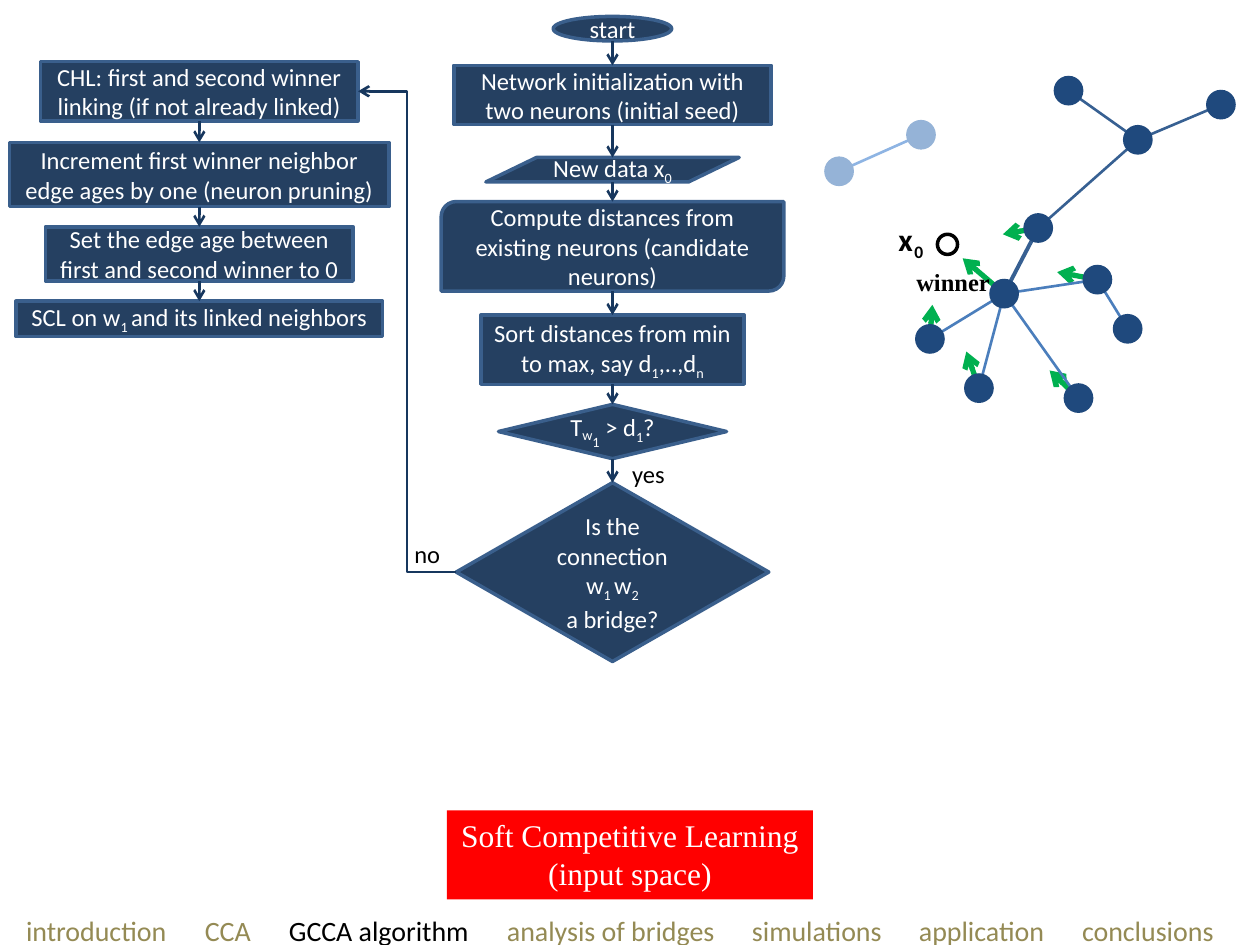
import pptx
import pptx.dml.color
import pptx.enum.shapes
import pptx.enum.text
import pptx.oxml.ns
import pptx.util
import lxml.etree

Pt = pptx.util.Pt
rgb = pptx.dml.color.RGBColor.from_string
qn = pptx.oxml.ns.qn
Shape = pptx.enum.shapes.MSO_SHAPE
Connector = pptx.enum.shapes.MSO_CONNECTOR
Align = pptx.enum.text.PP_ALIGN
Anchor = pptx.enum.text.MSO_ANCHOR

deck = pptx.Presentation()
deck.slide_width, deck.slide_height = Pt(720), Pt(540)
slide = deck.slides.add_slide(deck.slide_layouts[6])
shapes = slide.shapes


def draw_line(start, end, hue, width, arrow=False, kind=Connector.STRAIGHT):
    line = shapes.add_connector(kind, *[Pt(v) for v in (*start, *end)])
    line.line.color.rgb = rgb(hue)
    line.line.width = Pt(width)
    if arrow:
        lxml.etree.SubElement(line.line._get_or_add_ln(), qn("a:tailEnd"), type="arrow")
    lxml.etree.SubElement(line._element.spPr, qn("a:effectLst"))
    return line


def style_text(box, size, hue, font="Calibri", align=Align.CENTER, bold=False):
    for paragraph in box.text_frame.paragraphs:
        paragraph.alignment = align
        for run in paragraph.runs:
            run.font.size = Pt(size)
            run.font.name = font
            run.font.bold = bold
            run.font.color.rgb = rgb(hue)


nodes = {
    "south": (559.4, 221.8), "east": (627.1, 159.8), "west": (531.4, 193.7),
    "far east": (644.4, 187.9), "southeast": (616.3, 227.5), "winner": (573.8, 167.8),
    "fork": (650.2, 79.9), "northeast": (697.7, 59.8), "north": (610.6, 51.8),
    "second": (593.3, 130.3), "pale left": (479.5, 97.9), "pale right": (526.3, 77),
}
moves = [
    ("southeast", (599.8, 211.7)), ("south", (552.2, 200.9)), ("east", (604.1, 155.5)),
    ("west", (532.8, 174.2)), ("second", (573.1, 133.9)), ("winner", (550.1, 147.6)),
]
edges = [
    ("winner", "second", "376092", 2.25), ("winner", "south", "4B7EBC", 1.5),
    ("winner", "west", "4B7EBC", 1.5), ("winner", "southeast", "4B7EBC", 1.5),
    ("winner", "east", "4B7EBC", 1.5), ("far east", "east", "4B7EBC", 1.5),
    ("fork", "second", "376092", 1.5), ("fork", "north", "376092", 1.5),
    ("northeast", "fork", "376092", 1.5), ("pale right", "pale left", "8EB4E3", 1.5),
]
for neuron, target in moves:
    draw_line(nodes[neuron], target, "00B050", 3, arrow=True)
for first, second, hue, width in edges:
    draw_line(nodes[first], nodes[second], hue, width)

diameter = 17
for name, (x, y) in nodes.items():
    neuron = shapes.add_shape(Shape.OVAL, Pt(x - diameter / 2), Pt(y - diameter / 2),
                              Pt(diameter), Pt(diameter))
    neuron.shadow.inherit = False
    neuron.fill.solid()
    neuron.fill.fore_color.rgb = rgb("95B3D7" if name.startswith("pale") else "1F497D")
    neuron.line.fill.background()

new_data = shapes.add_shape(Shape.OVAL, Pt(535.7), Pt(133.9), Pt(11.5), Pt(11.5))
new_data.shadow.inherit = False
new_data.fill.background()
new_data.line.color.rgb = rgb("000000")
new_data.line.width = Pt(2)

main_steps = [
    (Shape.OVAL, 9.4, 67.7, 14, [[("start", 0)]]),
    (Shape.RECTANGLE, 37.4, 181.4, 33.8,
     [[("Network initialization with two neurons (initial seed)", 0)]]),
    (Shape.FLOWCHART_DATA, 90, 144.7, 14, [[("New data x", 0), ("0", -25)]]),
    (Shape.ROUND_2_DIAG_RECTANGLE, 115.2, 195.8, 51.1,
     [[("Compute distances from existing neurons (candidate neurons)", 0)]]),
    (Shape.FLOWCHART_PROCESS, 180, 150.5, 39.6,
     [[("Sort distances from min to max, say d", 0), ("1", -25), (",..,d", 0), ("n", -25)]]),
    (Shape.FLOWCHART_DECISION, 231.1, 130.3, 31,
     [[("T", 0), ("w", -16), ("1", -46), (" > d", 0), ("1", -25), ("?", 0)]]),
    (Shape.FLOWCHART_DECISION, 275.8, 178.6, 102.2,
     [[("Is the connection w", 0), ("1 ", -25), ("w", 0), ("2", -25)], [("a bridge?", 0)]]),
]
update_steps = [
    (Shape.FLOWCHART_PROCESS, 35.3, 181.4, 33.8,
     [[("CHL: first and second winner linking (if not already linked)", 0)]]),
    (Shape.FLOWCHART_PROCESS, 81.4, 216.7, 36.7,
     [[("Increment first winner neighbor edge ages by one (neuron pruning)", 0)]]),
    (Shape.FLOWCHART_PROCESS, 129.6, 175.7, 31,
     [[("Set the edge age between first and second winner to 0", 0)]]),
    (Shape.FLOWCHART_PROCESS, 172.1, 209.5, 20.2,
     [[("SCL on w", 0), ("1 ", -25), ("and its linked neighbors", 0)]]),
]
four_sided = (Shape.RECTANGLE, Shape.FLOWCHART_PROCESS, Shape.FLOWCHART_DECISION)
columns = []
for center, steps in ((350, main_steps), (113.9, update_steps)):
    column = []
    for kind, top, width, height, paragraphs in steps:
        step = shapes.add_shape(kind, Pt(center - width / 2), Pt(top), Pt(width), Pt(height))
        step.shadow.inherit = False
        step.fill.solid()
        step.fill.fore_color.rgb = rgb("254061")
        step.line.color.rgb = rgb("3A5F8C")
        step.line.width = Pt(2)
        step.text_frame.vertical_anchor = Anchor.MIDDLE
        for index, pieces in enumerate(paragraphs):
            paragraph = (step.text_frame.add_paragraph() if index
                         else step.text_frame.paragraphs[0])
            for piece, baseline in pieces:
                run = paragraph.add_run()
                run.text = piece
                if baseline:
                    run.font._element.set("baseline", str(baseline * 1000))
        style_text(step, 14, "FFFFFF")
        if column:
            above_kind, above_top, _, above_height, _ = steps[len(column) - 1]
            arrow = draw_line((center, above_top + above_height), (center, top),
                              "17375E", 1.5, arrow=True)
            if above_kind in four_sided:
                arrow.begin_connect(column[-1], 2)
            if kind in four_sided:
                arrow.end_connect(step, 0)
        column.append(step)
    columns.append(column)

no_branch = draw_line((260.7, 326.9), (204.6, 52.2), "17375E", 1.5, arrow=True,
                      kind=Connector.ELBOW)
no_branch.begin_connect(columns[0][-1], 1)
no_branch.end_connect(columns[1][0], 3)

labels = [
    ("yes", 354.2, 258.5, 33.8, 24.5, 14, "Calibri", Align.LEFT, False, True),
    ("no", 229.7, 304.6, 33.8, 24.5, 14, "Calibri", Align.LEFT, False, True),
    ("winner", 516.2, 149, 56.9, 24.5, 14, "Times New Roman", Align.CENTER, True, False),
    ("x", 506.2, 122.4, 23, 51.1, 18, "Calibri", Align.LEFT, True, False),
    ("0", 515.5, 133.9, 19.4, 19.4, 10, "Calibri", Align.LEFT, True, False),
]
for words, left, top, width, height, size, font, align, bold, wrap in labels:
    label = shapes.add_textbox(Pt(left), Pt(top), Pt(width), Pt(height))
    label.text_frame.word_wrap = wrap
    label.text_frame.text = words
    style_text(label, size, "000000", font, align, bold)

learning = shapes.add_shape(Shape.RECTANGLE, Pt(255.4), Pt(463), Pt(209.2), Pt(51))
learning.shadow.inherit = False
learning.fill.solid()
learning.fill.fore_color.rgb = rgb("FF0000")
learning.line.fill.background()
learning.text_frame.word_wrap = False
learning.text_frame.vertical_anchor = Anchor.TOP
learning.text_frame.text = "Soft Competitive Learning\n(input space)"
style_text(learning, 18, "FFFFFF", "Times New Roman")

sections = [
    ("introduction", 0), ("CCA", 102.2), ("GCCA algorithm", 150.2),
    ("analysis of bridges", 274.8), ("simulations", 414.8), ("application", 510.2),
    ("conclusions", 603.4),
]
agenda = shapes.add_textbox(Pt(0), Pt(518.4), Pt(720), Pt(26.6))
agenda.text_frame.word_wrap = True
agenda.text_frame.margin_left = Pt(14.9)
agenda_line = agenda.text_frame.paragraphs[0]
tab_stops = lxml.etree.SubElement(agenda_line._p.get_or_add_pPr(), qn("a:tabLst"))
for section, position in sections:
    if position:
        lxml.etree.SubElement(tab_stops, qn("a:tab"), pos=str(int(Pt(position))), algn="l")
    run = agenda_line.add_run()
    run.text = "\t" + section if position else section
style_text(agenda, 16, "948A54", align=Align.LEFT)
agenda_line.runs[2].font.color.rgb = rgb("000000")

deck.save("out.pptx")
